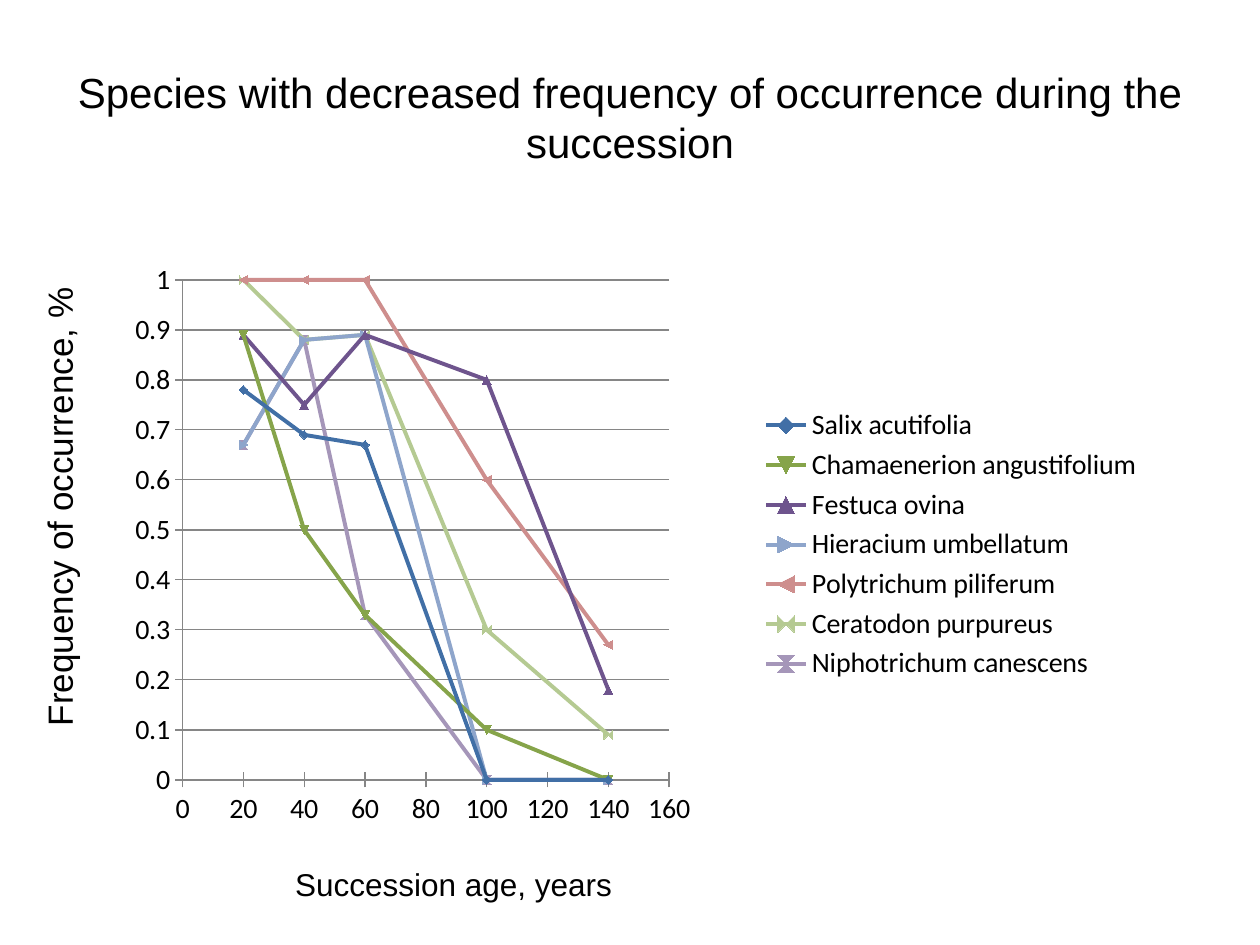
from lxml.etree import SubElement
from pptx import Presentation
from pptx.chart.data import XyChartData
from pptx.dml.color import RGBColor
from pptx.enum.chart import XL_CHART_TYPE, XL_LEGEND_POSITION, XL_TICK_MARK
from pptx.enum.text import MSO_ANCHOR, MSO_AUTO_SIZE, PP_ALIGN
from pptx.oxml.ns import qn
from pptx.util import Cm, Pt

BLACK = RGBColor(0x00, 0x00, 0x00)
GRAY = RGBColor(0x86, 0x86, 0x86)
BLUE = RGBColor(0x41, 0x6F, 0xA6)
GREEN = RGBColor(0x86, 0xA4, 0x4A)
PURPLE = RGBColor(0x6E, 0x54, 0x8D)
LIGHT_BLUE = RGBColor(0x8E, 0xA5, 0xCB)
LIGHT_RED = RGBColor(0xCE, 0x8E, 0x8D)
LIGHT_GREEN = RGBColor(0xB5, 0xCA, 0x92)
LIGHT_PURPLE = RGBColor(0xA5, 0x96, 0xB9)

AGES = (140, 100, 60, 40, 20)
SPECIES = {
    "Salix acutifolia": (BLUE, (0, 0, 0.67, 0.69, 0.78)),
    "Chamaenerion angustifolium": (GREEN, (0, 0.1, 0.33, 0.5, 0.89)),
    "Festuca ovina": (PURPLE, (0.18, 0.8, 0.89, 0.75, 0.89)),
    "Hieracium umbellatum": (LIGHT_BLUE, (0, 0, 0.89, 0.88, 0.67)),
    "Polytrichum piliferum": (LIGHT_RED, (0.27, 0.6, 1, 1, 1)),
    "Ceratodon purpureus": (LIGHT_GREEN, (0.09, 0.3, 0.89, 0.88, 1)),
    "Niphotrichum canescens": (LIGHT_PURPLE, (0, 0, 0.33, 0.88, 0.67)),
}
PLOT_LAYOUT = {
    "layoutTarget": "inner", "xMode": "edge", "yMode": "edge",
    "x": 0.1, "y": 0.05, "w": 0.45, "h": 0.85,
}


def apply_format(target, values):
    """Set every attribute named in the dict."""
    for name, value in values.items():
        setattr(target, name, value)


class SlideBuilder:
    """Holds the text style and the current slide."""

    def __init__(self, slide, text_font, chart_font):
        self.slide = slide
        self.text_font = text_font
        self.chart_font = chart_font

    def style_font(self, font, name, size):
        """Give a font its name, size and colour."""
        apply_format(font, {"name": name, "size": Pt(size), "bold": False})
        font.color.rgb = BLACK

    def fill_text(self, box, text, size, align):
        """Put one paragraph into a box."""
        para = box.text_frame.paragraphs[0]
        para.alignment = align
        span = para.add_run()
        span.text = text
        self.style_font(span.font, self.text_font, size)

    def title(self, text, left, top, width, height, size):
        """Place and fill the title placeholder."""
        box = self.slide.shapes.title
        apply_format(box, {"left": Cm(left), "top": Cm(top),
                           "width": Cm(width), "height": Cm(height)})
        box.text_frame.vertical_anchor = MSO_ANCHOR.MIDDLE
        self.fill_text(box, text, size, PP_ALIGN.CENTER)

    def label(self, text, left, top, width, height, size, rotation=0):
        """Add an axis label as a text box."""
        box = self.slide.shapes.add_textbox(Cm(left), Cm(top), Cm(width), Cm(height))
        box.rotation = rotation
        apply_format(box.text_frame, {"word_wrap": False,
                                      "auto_size": MSO_AUTO_SIZE.SHAPE_TO_FIT_TEXT})
        self.fill_text(box, text, size, PP_ALIGN.LEFT)

    def style_axis(self, axis, maximum, unit, gridlines):
        """Format one chart axis."""
        apply_format(axis, {
            "minimum_scale": 0, "maximum_scale": maximum, "major_unit": unit,
            "has_major_gridlines": gridlines, "has_title": False,
            "major_tick_mark": XL_TICK_MARK.CROSS,
            "minor_tick_mark": XL_TICK_MARK.NONE,
        })
        apply_format(axis.tick_labels, {"number_format": "General",
                                        "number_format_is_linked": False})
        self.style_font(axis.tick_labels.font, self.chart_font, 16)
        lines = [axis.format.line]
        if gridlines:
            lines.append(axis.major_gridlines.format.line)
        for line in lines:
            line.width = Pt(0.75)
            line.color.rgb = GRAY

    def scatter(self, left, top, width, height):
        """Add the chart of species frequency against age."""
        data = XyChartData()
        for name, (_, frequencies) in SPECIES.items():
            series = data.add_series(name)
            for age, frequency in zip(AGES, frequencies):
                series.add_data_point(age, frequency)
        chart = self.slide.shapes.add_chart(
            XL_CHART_TYPE.XY_SCATTER_LINES, Cm(left), Cm(top), Cm(width), Cm(height), data
        ).chart
        apply_format(chart, {"has_title": False, "has_legend": True})
        self.style_font(chart.font, self.chart_font, 10)
        apply_format(chart.legend, {"position": XL_LEGEND_POSITION.RIGHT,
                                    "include_in_layout": False})
        self.style_font(chart.legend.font, self.chart_font, 16)
        self.style_axis(chart.category_axis, 160, 20, False)
        self.style_axis(chart.value_axis, 1, 0.1, True)
        plot = chart.plots[0]
        plot.vary_by_categories = False
        for series, (color, _) in zip(plot.series, SPECIES.values()):
            series.smooth = False
            series.format.line.width = Pt(2.25)
            series.marker.size = 5
            marker = series.marker.format
            for fill in (series.format.line.fill, marker.fill, marker.line.fill):
                fill.solid()
                fill.fore_color.rgb = color
        self.place_plot(chart)

    def place_plot(self, chart):
        """Fix the inner plot area inside the chart."""
        area = chart.element.find(".//" + qn("c:plotArea"))
        layout = area.find(qn("c:layout"))
        if layout is None:
            layout = SubElement(area, qn("c:layout"))
            area.insert(0, layout)
        manual = SubElement(layout, qn("c:manualLayout"))
        for name, value in PLOT_LAYOUT.items():
            SubElement(manual, qn("c:" + name)).set("val", str(value))


def main():
    """Build the slide and save the deck."""
    deck = Presentation()
    apply_format(deck, {"slide_width": Cm(25.4), "slide_height": Cm(19.05)})
    page = SlideBuilder(deck.slides.add_slide(deck.slide_layouts[5]), "Arial", "Calibri")
    page.title("Species with decreased frequency of occurrence during the succession",
               1.27, 0.76, 22.86, 3.18, 24)
    page.scatter(1.5, 5.05, 21.8, 11.86)
    page.label("Succession age, years", 5.7, 17.32, 6.96, 1.02, 18)
    page.label("Frequency of occurrence, %", -3.5, 9.63, 9.4, 1.12, 20, 270)
    deck.save("out.pptx")


if __name__ == "__main__":
    main()
